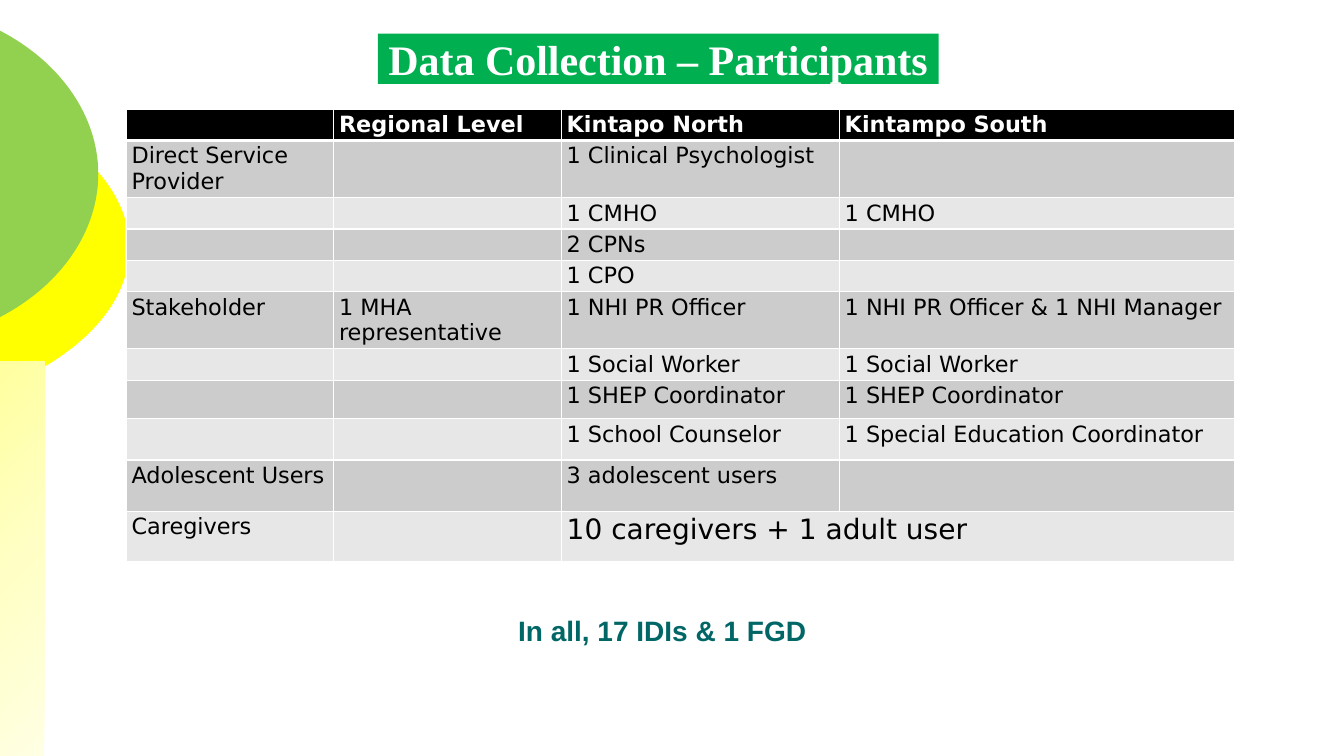
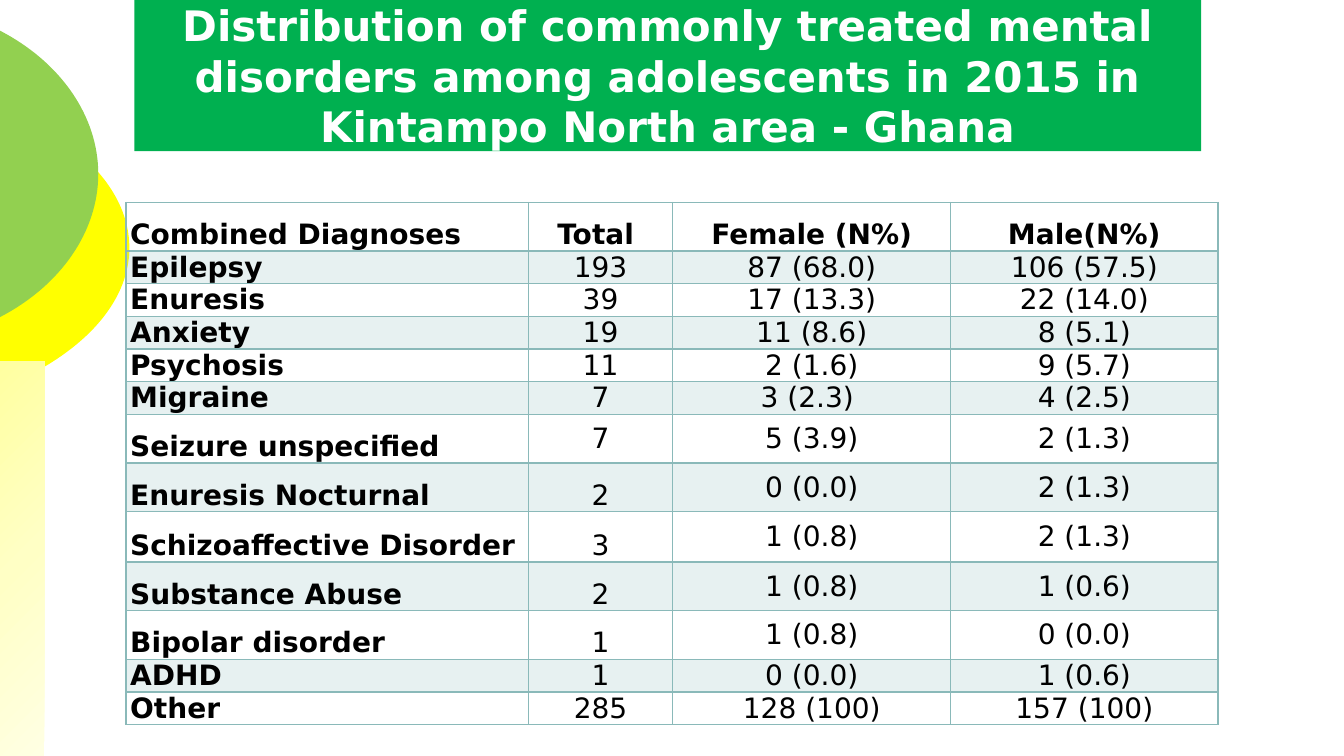
from dataclasses import dataclass, field

from lxml import etree
from pptx import Presentation
from pptx import util as u
from pptx.dml.color import RGBColor
from pptx.enum import shapes, text
from pptx.oxml import parse_xml
from pptx.oxml.ns import qn

# The slide is a grid of 160 columns by 90 rows, with square cells
COLUMNS, ROWS = 160, 90
CELL = u.Inches(7.5) / ROWS
DRAWING_NS = "http://schemas.openxmlformats.org/drawingml/2006/main"
TITLE_ONLY = 5


@dataclass(frozen=True)
class Theme:
    green: str = "00B050"
    yellow: str = "FFFF00"
    lime: str = "92D050"
    glow: tuple[str, ...] = ("FFFFA0", "FFFFC5", "FFFFE3")
    white: str = "FFFFFF"
    black: str = "000000"
    teal: str = "006666"
    pale_teal: str = "8AB9B9"
    dark_band: str = "CCCCCC"
    light_band: str = "E7E7E7"
    body_font: str = "DejaVu Sans"
    serif_font: str = "Times New Roman"
    note_font: str = "Arial"
    title_size: int = 30
    large_size: int = 20
    table_size: int = 16


THEME = Theme()


@dataclass(frozen=True)
class Area:
    left: float
    top: float
    width: float
    height: float

    def lengths(self) -> tuple[int, int, int, int]:
        return (grid(self.left), grid(self.top), grid(self.width), grid(self.height))


@dataclass(frozen=True)
class Bulge:
    """The part of an ellipse right of the slide edge, mirrored about its middle."""
    ellipse: Area
    curve: tuple[tuple[float, float], ...]
    color: str


@dataclass(frozen=True)
class Fill:
    color: str
    opacity: int = 100


@dataclass(frozen=True)
class Style:
    size: int
    color: str = THEME.black
    bold: bool = False
    font: str = THEME.body_font
    align: text.PP_ALIGN = text.PP_ALIGN.LEFT
    anchor: text.MSO_ANCHOR = text.MSO_ANCHOR.TOP


@dataclass(frozen=True)
class TableLook:
    border: str
    header_rule: int
    header_fill: Fill | None
    bands: tuple[Fill | None, Fill | None]
    side_margin: float  # points
    end_margin: float  # points


@dataclass(frozen=True)
class TableData:
    area: Area
    widths: tuple[float, ...]
    heights: tuple[float, ...]
    rows: tuple[tuple[str, ...], ...]
    look: TableLook
    styles: dict[tuple[int, int], Style] = field(default_factory=dict)


BULGES = (
    Bulge(Area(-56.6, 9, 72, 41),
          ((-0.1, 12.7), (9.6, 16.6), (15.4, 22.8), (15.4, 29.5)), THEME.yellow),
    Bulge(Area(-42.5, 0, 54.2, 41.4),
          ((-0.1, 3.6), (7.3, 7.4), (11.7, 13.9), (11.7, 20.7)), THEME.lime),
)
SIDE_BAR = Area(0, 43, 5.3, 47)

PARTICIPANT_LOOK = TableLook(
    THEME.white, 3, Fill(THEME.black),
    (Fill(THEME.dark_band), Fill(THEME.light_band)), 4, 1.95)
DIAGNOSIS_LOOK = TableLook(
    THEME.pale_teal, 2, None, (Fill(THEME.pale_teal, 20), None), 3, 0)

PARTICIPANTS = (
    ("", "Regional Level", "Kintapo North", "Kintampo South"),
    ("Direct Service Provider", "", "1 Clinical Psychologist", ""),
    ("", "", "1 CMHO", "1 CMHO"),
    ("", "", "2 CPNs", ""),
    ("", "", "1 CPO", ""),
    ("Stakeholder", "1 MHA representative", "1 NHI PR Officer",
     "1 NHI PR Officer & 1 NHI Manager"),
    ("", "", "1 Social Worker", "1 Social Worker"),
    ("", "", "1 SHEP Coordinator", "1 SHEP Coordinator"),
    ("", "", "1 School Counselor", "1 Special Education Coordinator"),
    ("Adolescent Users", "", "3 adolescent users", ""),
    ("Caregivers", "", "10 caregivers + 1 adult user", ""),
)

DIAGNOSES = (
    ("Combined Diagnoses", "Total ", "Female (N%)", "Male(N%)"),
    ("Epilepsy", "193", "87 (68.0)", "106 (57.5)"),
    ("Enuresis", "39", "17 (13.3)", "22 (14.0)"),
    ("Anxiety", "19", "11 (8.6)", "8 (5.1)"),
    ("Psychosis", "11", "2 (1.6)", "9 (5.7)"),
    ("Migraine", "7", "3 (2.3) ", "4 (2.5)"),
    ("Seizure unspecified", "7", "5 (3.9)", "2 (1.3)"),
    ("Enuresis Nocturnal", "2", "0 (0.0)", "2 (1.3)"),
    ("Schizoaffective Disorder", "3", "1 (0.8)", "2 (1.3)"),
    ("Substance Abuse", "2", "1 (0.8)", "1 (0.6)"),
    ("Bipolar disorder", "1", "1 (0.8)", "0 (0.0)"),
    ("ADHD", "1", "0 (0.0)", "1 (0.6)"),
    ("Other", "285", "128 (100)", "157 (100)"),
)


def grid(cells: float) -> u.Emu:
    return u.Emu(round(cells * CELL))


def rgb(color: str) -> RGBColor:
    return RGBColor.from_string(color)


def write(para, words: str, style: Style) -> None:
    para.text = words
    para.alignment = style.align
    para.font.size = u.Pt(style.size)
    para.font.bold = style.bold
    para.font.name = style.font
    para.font.color.rgb = rgb(style.color)


# Shared backdrop, kept on the layout
def add_bulge(page, bulge: Bulge):
    left, top, width, height = bulge.ellipse.lengths()
    right, bottom = left + width, top + height
    outline = page.shapes.build_freeform(left, top)
    outline.add_line_segments([(right, top), (right, bottom), (left, bottom)])
    shape = outline.convert_to_shape()
    shape.fill.solid()
    shape.fill.fore_color.rgb = rgb(bulge.color)

    # Trade the straight frame for two true curves
    middle = bulge.curve[-1][1]
    lower = [(x, 2 * middle - y) for x, y in reversed(bulge.curve[:-1])]
    trace = shape.element.spPr.find(f".//{qn('a:path')}")
    for segment in list(trace):
        trace.remove(segment)
    for name, points in (("moveTo", bulge.curve[:1]), ("cubicBezTo", bulge.curve[1:]),
                         ("cubicBezTo", lower), ("close", ())):
        segment = etree.SubElement(trace, qn(f"a:{name}"))
        for x, y in points:
            etree.SubElement(segment, qn("a:pt"),
                             x=str(grid(x) - left), y=str(grid(y) - top))
    return shape


def add_side_bar(page):
    bar = page.shapes.add_shape(shapes.MSO_SHAPE.RECTANGLE, *SIDE_BAR.lengths())
    stops = "".join(f'<a:gs pos="{i * 50000}"><a:srgbClr val="{color}"/></a:gs>'
                    for i, color in enumerate(THEME.glow))
    bar.element.spPr.insert(2, parse_xml(
        f'<a:gradFill xmlns:a="{DRAWING_NS}"><a:gsLst>{stops}</a:gsLst>'
        '<a:path path="circle"><a:fillToRect r="100000" b="100000"/></a:path>'
        '</a:gradFill>'))
    return bar


def add_backdrop(page) -> None:
    parts = [add_bulge(page, bulge) for bulge in BULGES] + [add_side_bar(page)]
    for part in parts:
        part.line.fill.background()
        part.shadow.inherit = False
        page.slide_layout.shapes.element.append(part.element)


# Title and note
def set_title(page, words: str, area: Area, font: str) -> None:
    title = page.shapes.title
    title.left, title.top, title.width, title.height = area.lengths()
    title.fill.solid()
    title.fill.fore_color.rgb = rgb(THEME.green)
    frame = title.text_frame
    frame.auto_size = text.MSO_AUTO_SIZE.NONE
    frame.vertical_anchor = text.MSO_ANCHOR.MIDDLE
    frame.margin_left = frame.margin_right = u.Inches(0.07)
    frame.margin_top = frame.margin_bottom = u.Inches(0.04)
    write(frame.paragraphs[0], words,
          Style(THEME.title_size, THEME.white, True, font, text.PP_ALIGN.CENTER))


def add_note(page, words: str, area: Area) -> None:
    frame = page.shapes.add_textbox(*area.lengths()).text_frame
    frame.word_wrap = True
    frame.vertical_anchor = text.MSO_ANCHOR.BOTTOM
    frame.margin_top = frame.margin_bottom = u.Inches(0.04)
    write(frame.paragraphs[0], words,
          Style(THEME.large_size, THEME.teal, True, THEME.note_font,
                text.PP_ALIGN.CENTER))


# Tables
def set_borders(cell, color: str, bottom: int) -> None:
    properties = cell._tc.get_or_add_tcPr()
    for side, width in (("L", 1), ("R", 1), ("T", 1), ("B", bottom)):
        line = etree.SubElement(properties, qn(f"a:ln{side}"), w=str(u.Pt(width)))
        solid = etree.SubElement(line, qn("a:solidFill"))
        etree.SubElement(solid, qn("a:srgbClr"), val=color)


def set_fill(cell, fill: Fill | None) -> None:
    if fill is None:
        cell.fill.background()
        return
    cell.fill.solid()
    cell.fill.fore_color.rgb = rgb(fill.color)
    if fill.opacity < 100:
        color = cell._tc.tcPr.find(f"{qn('a:solidFill')}/{qn('a:srgbClr')}")
        etree.SubElement(color, qn("a:alpha"), val=str(fill.opacity * 1000))


def add_table(page, data: TableData):
    look = data.look
    table = page.shapes.add_table(
        len(data.rows), len(data.widths), *data.area.lengths()).table
    table.horz_banding = False
    for column, width in zip(table.columns, data.widths):
        column.width = grid(width)
    for row, height in zip(table.rows, data.heights):
        row.height = grid(height)
    for r, row in enumerate(data.rows):
        for c, words in enumerate(row):
            cell, style = table.cell(r, c), data.styles[r, c]
            set_borders(cell, look.border, 1 if r else look.header_rule)
            set_fill(cell, look.bands[(r - 1) % 2] if r else look.header_fill)
            cell.margin_left = cell.margin_right = u.Pt(look.side_margin)
            cell.margin_top = cell.margin_bottom = u.Pt(look.end_margin)
            cell.vertical_anchor = style.anchor
            para = cell.text_frame.paragraphs[0]
            write(para, words, style)
            if not words:  # an empty cell must not stretch its row
                etree.SubElement(para._p, qn("a:endParaRPr"), sz=str(style.size * 100))
    return table


def participant_style(row: int, column: int) -> Style:
    if row == 0:
        return Style(THEME.table_size, THEME.white, True)
    merged = row == len(PARTICIPANTS) - 1 and column >= 2
    return Style(THEME.large_size if merged else THEME.table_size)


def diagnosis_style(row: int, column: int) -> Style:
    middle = row > 0 and (column >= 2 or (row, column) == (6, 1))
    return Style(
        THEME.large_size, bold=row == 0 or column == 0,
        align=text.PP_ALIGN.CENTER if column else text.PP_ALIGN.LEFT,
        anchor=text.MSO_ANCHOR.MIDDLE if middle else text.MSO_ANCHOR.BOTTOM)


def styles_for(rows, rule) -> dict[tuple[int, int], Style]:
    return {(r, c): rule(r, c) for r, row in enumerate(rows) for c in range(len(row))}


def main() -> None:
    deck = Presentation()
    deck.slide_width, deck.slide_height = grid(COLUMNS), grid(ROWS)
    layout = deck.slide_layouts[TITLE_ONLY]

    # Participants
    page = deck.slides.add_slide(layout)
    add_backdrop(page)
    set_title(page, "Data Collection – Participants", Area(45, 4, 66.75, 6),
              THEME.serif_font)
    table = add_table(page, TableData(
        Area(15, 13, 132, 55), (24.7, 27.1, 33.1, 47.1),
        (3.5, 6.1, 3.5, 3.5, 3.5, 5.2, 3.5, 4.6, 4.9, 6.1, 5.95),
        PARTICIPANTS, PARTICIPANT_LOOK, styles_for(PARTICIPANTS, participant_style)))
    table.cell(10, 2).merge(table.cell(10, 3))
    add_note(page, "In all, 17 IDIs & 1 FGD", Area(50, 72.95, 57.7, 4.6))

    # Diagnoses
    page = deck.slides.add_slide(layout)
    set_title(page, "Distribution of commonly treated mental disorders among "
              "adolescents in 2015 in Kintampo North area - Ghana",
              Area(16, 0, 127, 18), THEME.body_font)
    add_table(page, TableData(
        Area(15, 24.1, 130, 62), (47.9, 17.2, 33.1, 31.8),
        (5.8, *[3.7] * 5, 5.8, 5.8, 6, 5.8, 5.8, 3.7, 3.7),
        DIAGNOSES, DIAGNOSIS_LOOK, styles_for(DIAGNOSES, diagnosis_style)))

    deck.save("out.pptx")


if __name__ == "__main__":
    main()
